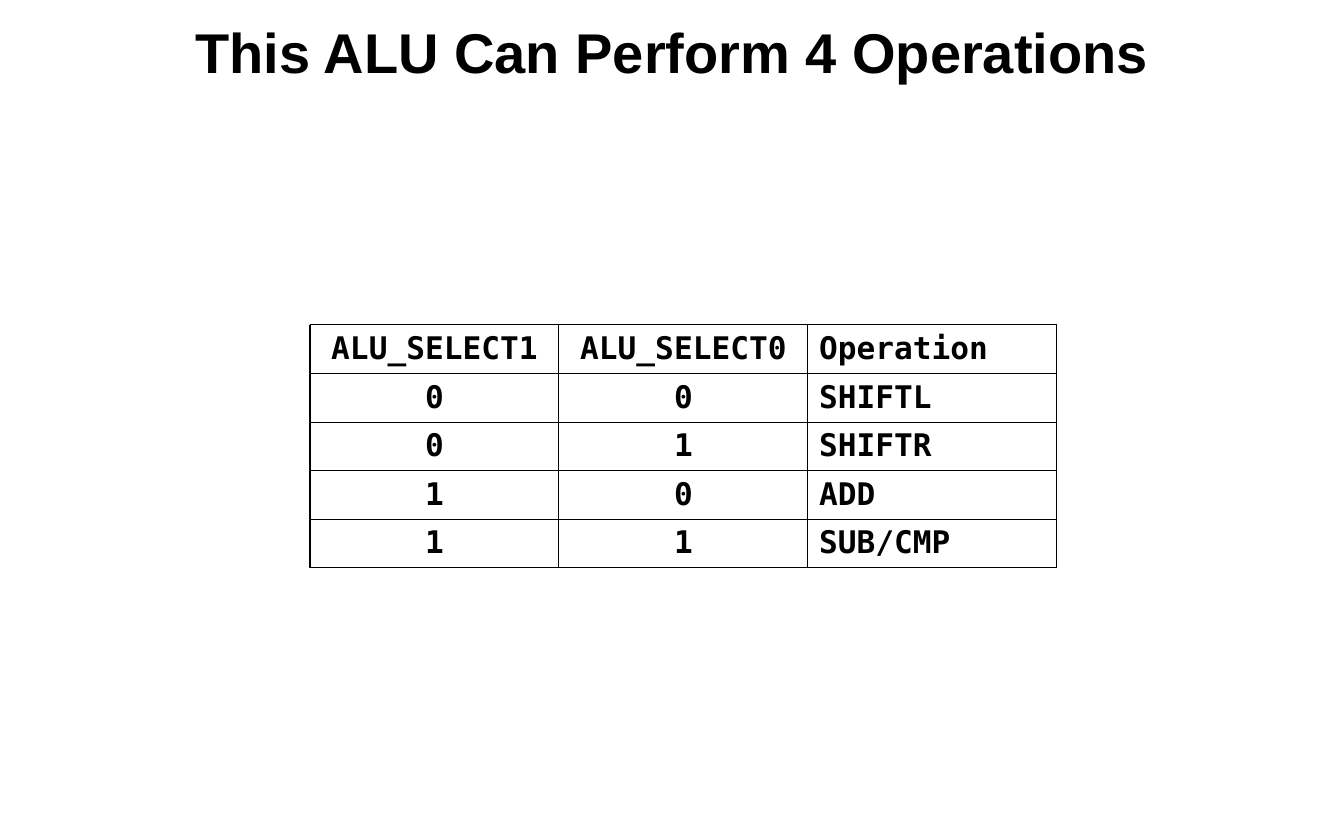
from lxml.etree import SubElement
from pptx import Presentation
from pptx.dml.color import RGBColor
from pptx.enum.text import MSO_ANCHOR, PP_ALIGN
from pptx.oxml.ns import qn
from pptx.util import Emu, Pt

PX = 914400 // 112
BLACK = RGBColor(0x00, 0x00, 0x00)
ROWS = [
    ("ALU_SELECT1", "ALU_SELECT0", "Operation"),
    ("0", "0", "SHIFTL"),
    ("0", "1", "SHIFTR"),
    ("1", "0", "ADD"),
    ("1", "1", "SUB/CMP"),
]


def px(n):
    return Emu(n * PX)


def add_text(tf, text, font, size, align):
    p = tf.paragraphs[0]
    p.alignment = align
    r = p.add_run()
    r.text = text
    r.font.name = font
    r.font.size = Pt(size)
    r.font.bold = True
    r.font.color.rgb = BLACK


def add_borders(cell):
    tc_pr = cell._tc.get_or_add_tcPr()
    for i, side in enumerate(("a:lnL", "a:lnR", "a:lnT", "a:lnB")):
        ln = SubElement(tc_pr, qn(side), w=str(Pt(0.75)))
        fill = SubElement(ln, qn("a:solidFill"))
        SubElement(fill, qn("a:srgbClr"), val=str(BLACK))
        tc_pr.insert(i, ln)


def add_title(s, x, y, w, h):
    tf = s.shapes.add_textbox(px(x), px(y), px(w), px(h)).text_frame
    tf.word_wrap = True
    tf.vertical_anchor = MSO_ANCHOR.TOP
    tf.margin_left = tf.margin_right = px(11)
    tf.margin_top, tf.margin_bottom = px(17), px(0)
    add_text(tf, "This ALU Can Perform 4 Operations", "Arial", 36, PP_ALIGN.CENTER)


def add_operations(s, x, y, w, h):
    table = s.shapes.add_table(
        len(ROWS), len(ROWS[0]), px(x), px(y), px(w), px(h)
    ).table
    table.first_row = table.horz_banding = False
    for i, row in enumerate(ROWS):
        for j, text in enumerate(row):
            cell = table.cell(i, j)
            cell.fill.background()
            add_borders(cell)
            align = PP_ALIGN.LEFT if j == 2 else PP_ALIGN.CENTER
            add_text(cell.text_frame, text, "DejaVu Sans Mono", 20, align)


def main():
    prs = Presentation()
    prs.slide_width, prs.slide_height = px(1344), px(840)
    s = prs.slides.add_slide(prs.slide_layouts[6])
    add_title(s, 112, 0, 1120, 84)
    add_operations(s, 310, 325, 747, 230)
    prs.save("out.pptx")


if __name__ == "__main__":
    main()
